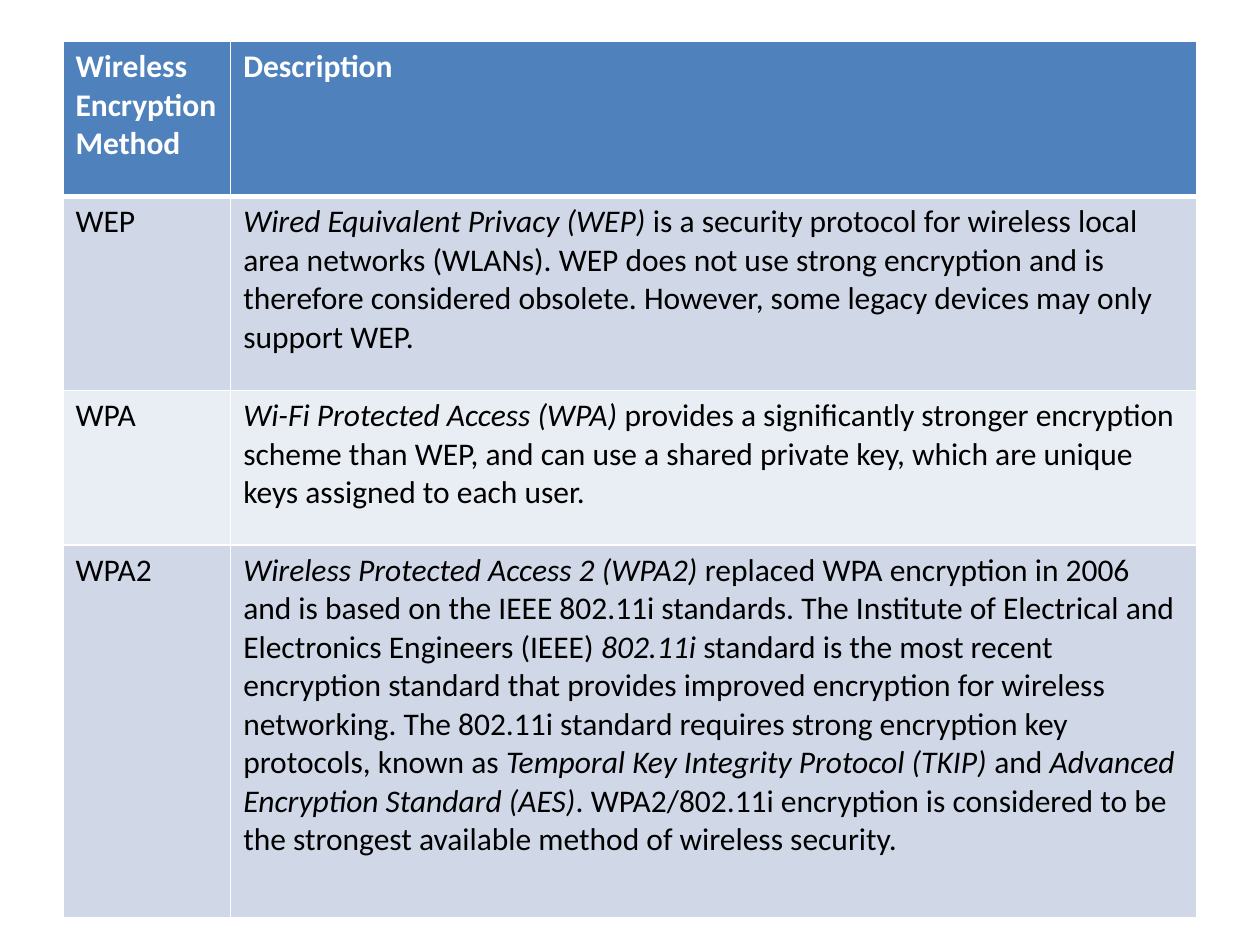
from lxml.etree import SubElement
from pptx import Presentation
from pptx.dml.color import RGBColor
from pptx.oxml.ns import qn
from pptx.util import Cm, Pt

WHITE = RGBColor(0xFF, 0xFF, 0xFF)
BLACK = RGBColor(0x00, 0x00, 0x00)
HEADER_BLUE = RGBColor(0x4F, 0x81, 0xBD)
BAND_DARK = RGBColor(0xD0, 0xD8, 0xE8)
BAND_LIGHT = RGBColor(0xE9, 0xED, 0xF4)

BLANK_LAYOUT = 6
COLUMN_WIDTHS = [3.38, 19.48]
ROW_HEIGHTS = [3.12, 3.91, 3.12, 7.52]
HEADINGS = ["Wireless Encryption Method", "Description"]

# Each description is a list of paragraphs whose spans alternate italic and upright.
METHODS = [
    ("WEP", [[
        "Wired Equivalent Privacy (WEP) ",
        "is a security protocol for wireless local area networks (WLANs). "
        "WEP does not use strong encryption and is therefore considered obsolete. "
        "However, some legacy devices may only support WEP.",
    ]]),
    ("WPA", [[
        "Wi-Fi Protected Access (WPA) ",
        "provides a significantly stronger encryption scheme than WEP, and can use "
        "a shared private key, which are unique keys assigned to each user.",
    ]]),
    ("WPA2", [[
        "Wireless Protected Access 2 (WPA2) ",
        "replaced WPA encryption in 2006 and is based on the IEEE 802.11i standards. "
        "The Institute of Electrical and Electronics Engineers (IEEE) ",
        "802.11i ",
        "standard is the most recent encryption standard that provides improved "
        "encryption for wireless networking. The 802.11i standard requires strong "
        "encryption key protocols, known as ",
        "Temporal Key Integrity Protocol (TKIP) ",
        "and ",
        "Advanced",
    ], [
        "Encryption Standard (AES)",
        ". WPA2/802.11i encryption is considered to be the strongest available "
        "method of wireless security.",
    ]]),
]


def format_span(span, color, bold=False, italic=False):
    font = span.font
    font.name = "Calibri"
    font.size = Pt(18)
    font.bold = bold
    font.italic = italic
    font.color.rgb = color


def write_plain(cell, text, color, bold=False):
    cell.text_frame.text = text
    format_span(cell.text_frame.paragraphs[0].runs[0], color, bold)


def write_description(cell, paragraphs):
    frame = cell.text_frame
    for number, spans in enumerate(paragraphs):
        para = frame.add_paragraph() if number else frame.paragraphs[0]
        for index, text in enumerate(spans):
            span = para.add_run()
            span.text = text
            format_span(span, BLACK, italic=index % 2 == 0)


def style_cell(cell, fill_color, top=1, bottom=1):
    properties = cell._tc.get_or_add_tcPr()
    for side, points in (("L", 1), ("R", 1), ("T", top), ("B", bottom)):
        line = SubElement(properties, qn(f"a:ln{side}"), w=str(Pt(points)))
        fill = SubElement(line, qn("a:solidFill"))
        SubElement(fill, qn("a:srgbClr"), val=str(WHITE))
    cell.fill.solid()
    cell.fill.fore_color.rgb = fill_color


def add_method_table(page):
    table = page.shapes.add_table(
        len(ROW_HEIGHTS), len(COLUMN_WIDTHS), Cm(1.27), Cm(0.84),
        Cm(sum(COLUMN_WIDTHS)), Cm(sum(ROW_HEIGHTS)),
    ).table
    for column, width in zip(table.columns, COLUMN_WIDTHS):
        column.width = Cm(width)
    for row, height in zip(table.rows, ROW_HEIGHTS):
        row.height = Cm(height)
    return table


def fill_header(table):
    for cell, heading in zip(table.rows[0].cells, HEADINGS):
        write_plain(cell, heading, WHITE, bold=True)
        style_cell(cell, HEADER_BLUE, bottom=3)


def fill_methods(table):
    for number, (method, description) in enumerate(METHODS, start=1):
        name_cell, description_cell = table.rows[number].cells
        write_plain(name_cell, method, BLACK)
        write_description(description_cell, description)
        for cell in (name_cell, description_cell):
            style_cell(cell, BAND_DARK if number % 2 else BAND_LIGHT,
                       top=3 if number == 1 else 1)


def main():
    deck = Presentation()
    deck.slide_width = Cm(25.4)
    deck.slide_height = Cm(19.05)
    page = deck.slides.add_slide(deck.slide_layouts[BLANK_LAYOUT])
    table = add_method_table(page)
    fill_header(table)
    fill_methods(table)
    deck.save("out.pptx")


if __name__ == "__main__":
    main()
